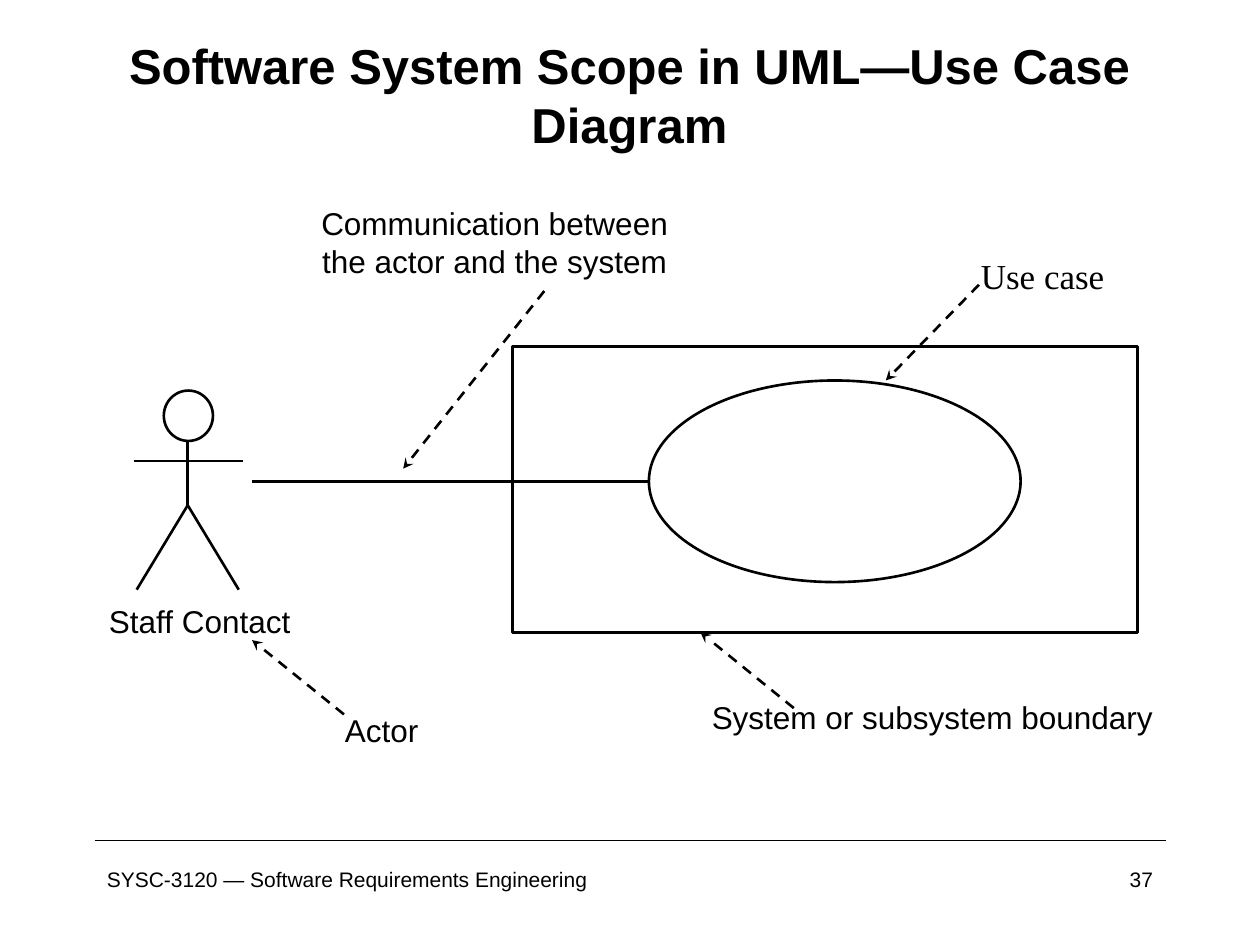
"""Build a slide that explains the parts of a UML use case diagram."""
from dataclasses import dataclass

from lxml import etree
from pptx import Presentation
from pptx.dml.color import RGBColor
from pptx.enum.dml import MSO_LINE
from pptx.enum.shapes import MSO_CONNECTOR, MSO_SHAPE
from pptx.enum.text import MSO_ANCHOR, MSO_AUTO_SIZE, PP_ALIGN
from pptx.oxml.ns import qn
from pptx.util import Inches, Pt

STRAIGHT = MSO_CONNECTOR.STRAIGHT
RECTANGLE, OVAL = MSO_SHAPE.RECTANGLE, MSO_SHAPE.OVAL
LEFT, CENTER, RIGHT = PP_ALIGN.LEFT, PP_ALIGN.CENTER, PP_ALIGN.RIGHT
TOP, MIDDLE = MSO_ANCHOR.TOP, MSO_ANCHOR.MIDDLE
DASH = MSO_LINE.DASH
NO_AUTOFIT = MSO_AUTO_SIZE.NONE


@dataclass(frozen=True)
class Theme:
    ink: RGBColor = RGBColor(0, 0, 0)
    paper: RGBColor = RGBColor(255, 255, 255)
    sans: str = "Arial"
    serif: str = "Times New Roman"
    title: int = 28
    label: int = 18
    use_case: int = 20
    footer: int = 12
    stroke: float = 1.5
    rule: float = 1


theme = Theme()
deck = Presentation()
deck.slide_width, deck.slide_height = Inches(10), Inches(7.5)
col, row = deck.slide_width / 100, deck.slide_height / 75
slide = deck.slides.add_slide(deck.slide_layouts[5])
shapes = slide.shapes


def put_text(text, box, holder=None, size=theme.label, font=theme.sans, bold=False,
             align=CENTER, anchor=TOP, wrap=False, inset=(0, 0)):
    x, y, w, h = box
    place = [round(v) for v in (x * col, y * row, w * col, h * row)]
    holder = holder or shapes.add_textbox(*place)
    holder.left, holder.top, holder.width, holder.height = place
    frame = holder.text_frame
    frame.auto_size = NO_AUTOFIT
    frame.word_wrap = wrap
    frame.vertical_anchor = anchor
    frame.margin_left = frame.margin_right = Inches(inset[0])
    frame.margin_top = frame.margin_bottom = Inches(inset[1])
    paragraph = frame.paragraphs[0]
    paragraph.alignment = align
    run = paragraph.add_run()
    run.text = text
    run.font.name, run.font.size, run.font.bold = font, Pt(size), bold
    run.font.color.rgb = theme.ink


def draw_line(x1, y1, x2, y2, width=theme.stroke, pointer=False):
    line = shapes.add_connector(STRAIGHT, round(x1 * col), round(y1 * row),
                                round(x2 * col), round(y2 * row))
    line.line.color.rgb = theme.ink
    line.line.width = Pt(width)
    if pointer:
        line.line.dash_style = DASH
        etree.SubElement(line.line._get_or_add_ln(), qn("a:tailEnd"), type="stealth")
    etree.SubElement(line._element.spPr, qn("a:effectLst"))


margin, right_edge = 7.5, 92.5
draw_line(margin, 66.7, right_edge, 66.7, width=theme.rule)
put_text("Software System Scope in UML—Use Case Diagram", (3.5, 4.6, 92.9, 5.8),
         holder=shapes.title, size=theme.title, bold=True, anchor=MIDDLE,
         wrap=True, inset=(0.1, 0.05))
for footer, left, width, align in (
    ("SYSC-3120 — Software Requirements Engineering", margin, 42.5, LEFT),
    ("37", right_edge - 20.8, 20.8, RIGHT),
):
    put_text(footer, (left, 68.3, width, 5), size=theme.footer, align=align,
             wrap=True, inset=(0.1, 0.05))

neck, hip, foot = 34.8, 40.1, 46.8
spine, reach = 14.9, 4.05
case_left, case_middle = 51.5, 38.2
draw_line(spine, hip, spine, neck)
draw_line(10.6, 36.6, 19.3, 36.6)
for side in (-1, 1):
    draw_line(spine, hip, spine + side * reach, foot)

for outline, x, y, w, h, filled in (
    (RECTANGLE, 40.7, 27.5, 49.6, 22.7, False),
    (OVAL, case_left, 30.2, 29.5, 16, False),
    (OVAL, 13, 31, 3.9, 4, True),
):
    figure = shapes.add_shape(outline, round(x * col), round(y * row),
                              round(w * col), round(h * row))
    figure.shadow.inherit = False
    figure.line.color.rgb = theme.ink
    figure.line.width = Pt(theme.stroke)
    if filled:
        figure.fill.solid()
        figure.fill.fore_color.rgb = theme.paper
    else:
        figure.fill.background()
draw_line(20, case_middle, case_left, case_middle)

put_text("Staff Contact", (8.6, 47.8, 14.5, 3))
put_text("System or subsystem boundary", (56.3, 55.4, 35.4, 3))
put_text("Actor", (27.3, 56.4, 6, 3))
put_text("Communication between the actor and the system", (23.8, 16.2, 30.9, 7.9), wrap=True)
put_text("Use case", (77.8, 20.2, 9.9, 3.3), size=theme.use_case, font=theme.serif)

for pointer_ends in (
    (27.3, 56.7, 20, 50.8),
    (63, 56.2, 55.6, 50.2),
    (43.2, 23.1, 32, 37.2),
    (77.7, 22.6, 70.3, 30.2),
):
    draw_line(*pointer_ends, pointer=True)

deck.save("out.pptx")
